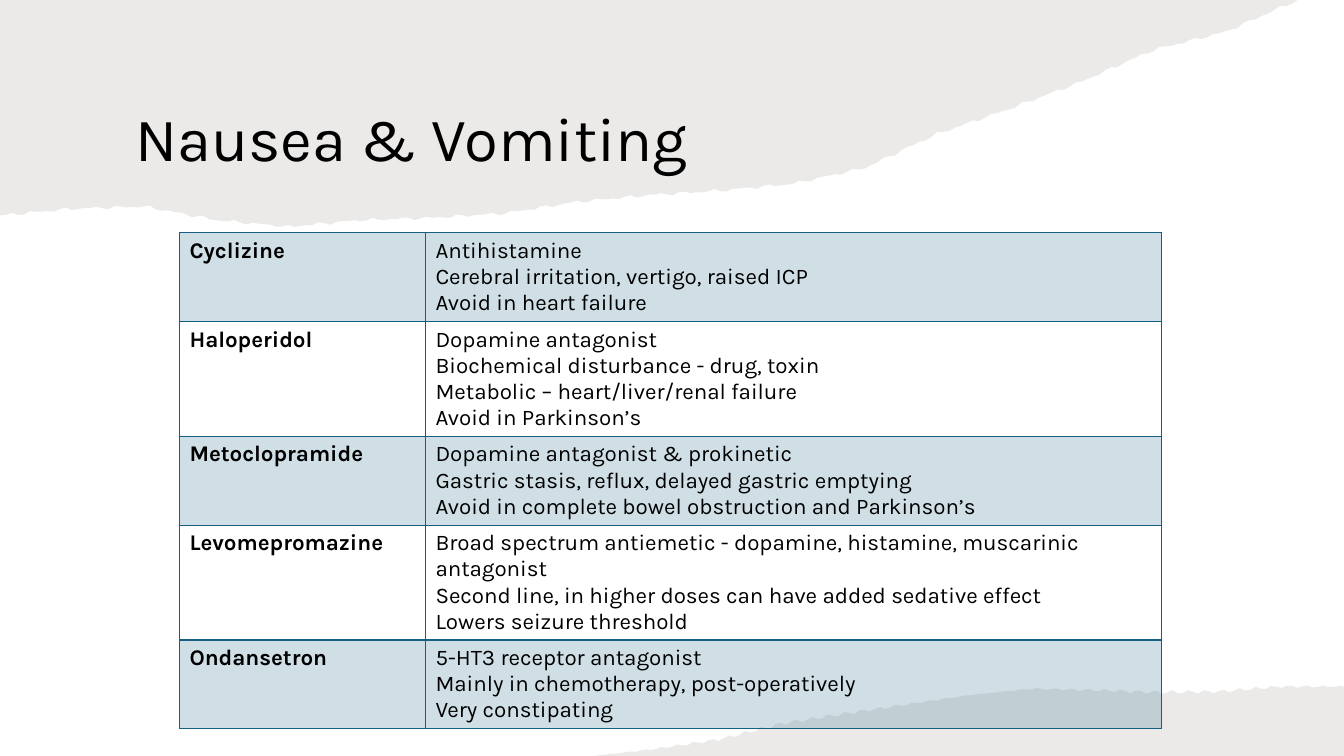
from math import sin

from lxml import etree
from pptx import Presentation
from pptx import util as u
from pptx.dml.color import RGBColor
from pptx.enum import text
from pptx.oxml.ns import qn

COLORS = {"paper": "82766A", "accent": "156082", "ink": "000000"}
OPACITY = {"paper": 15, "accent": 20}
FONT = "Karla"
WIDTH, HEIGHT = 13.33, 7.5
LINE_HEIGHT, CELL_PADDING = 0.26, 0.1
PLAIN_STYLE = "{2D5ABB26-0587-4C30-8999-92F81FD0307C}"

# Boxes: left, top, width, height
TITLE_BOX = (1.24, 0.67, 10.27, 1.46)
TOP_PAPER_BOX = (0, 0, 12.87, 2.25)
BOTTOM_PAPER_BOX = (5.89, 6.79, WIDTH - 5.89, HEIGHT - 6.79)

# Depth of a torn edge at equal steps from left to right, in percent of its box
TOP_DEPTHS = [95, 92, 91, 97, 100, 97, 96, 94, 89, 86, 84, 81, 74, 59, 48, 36, 22, 14, 0]
BOTTOM_DEPTHS = [100, 90, 77, 55, 41, 28, 15, 6, 8, 11, 10, 3, 3]
TEARS_PER_STEP, ROUGHNESS = 12, 0.01

# Drug, effects, lines the effects take up
DRUGS = [
    ("Cyclizine", ["Antihistamine", "Cerebral irritation, vertigo, raised ICP",
                   "Avoid in heart failure"], 3),
    ("Haloperidol", ["Dopamine antagonist", "Biochemical disturbance - drug, toxin",
                     "Metabolic – heart/liver/renal failure", "Avoid in Parkinson’s"], 4),
    ("Metoclopramide", ["Dopamine antagonist & prokinetic",
                        "Gastric stasis, reflux, delayed gastric emptying",
                        "Avoid in complete bowel obstruction and Parkinson’s"], 3),
    ("Levomepromazine", ["Broad spectrum antiemetic - dopamine, histamine, muscarinic antagonist",
                         "Second line, in higher doses can have added sedative effect",
                         "Lowers seizure threshold"], 4),
    ("Ondansetron", ["5-HT3 receptor antagonist", "Mainly in chemotherapy, post-operatively",
                     "Very constipating"], 3),
]


def set_format(target, values):
    for name, value in values.items():
        setattr(target, name, value)


def set_fill(part, properties, color):
    """Give a shape or cell a see-through fill, found in its XML properties."""
    part.fill.solid()
    part.fill.fore_color.rgb = RGBColor.from_string(COLORS[color])
    tint = properties.find(qn("a:solidFill"))[0]
    etree.SubElement(tint, qn("a:alpha"), val=str(OPACITY[color] * 1000))


def write(frame, lines, size, bold=False):
    frame.text = "\n".join(lines)
    for para in frame.paragraphs:
        for span in para.runs:
            set_format(span.font, {"name": FONT, "size": u.Pt(size), "bold": bold})
            span.font.color.rgb = RGBColor.from_string(COLORS["ink"])


def torn_edge(box, depths):
    """Join the depths by straight steps and roughen them with two waves."""
    left, top, width, height = box
    steps = len(depths) - 1
    tears = steps * TEARS_PER_STEP
    points = []
    for tear in range(tears + 1):
        step = min(tear // TEARS_PER_STEP, steps - 1)
        share = tear / TEARS_PER_STEP - step
        depth = depths[step] + share * (depths[step + 1] - depths[step])
        x = width * tear / tears
        y = height * depth / 100 + ROUGHNESS * (sin(37 * x) + sin(83 * x))
        points.append((left + x, top + min(max(y, 0), height)))
    return points


def add_torn_paper(page, box, depths, corner):
    outline = torn_edge(box, depths) + [corner]
    points = [(u.Inches(x), u.Inches(y)) for x, y in outline]
    builder = page.shapes.build_freeform(*points[0])
    builder.add_line_segments(points[1:], close=True)
    paper = builder.convert_to_shape()
    set_fill(paper, paper._element.spPr, "paper")
    paper.line.fill.background()
    paper.shadow.inherit = False
    return paper


def add_title(page, words, box):
    title = page.shapes.title
    lengths = [u.Inches(value) for value in box]
    set_format(title, dict(zip(("left", "top", "width", "height"), lengths)))
    write(title.text_frame, [words], 44)
    set_format(title.text_frame, {"auto_size": text.MSO_AUTO_SIZE.NONE,
                                  "vertical_anchor": text.MSO_ANCHOR.MIDDLE})
    set_format(title.text_frame.paragraphs[0], {"alignment": text.PP_ALIGN.LEFT,
                                                "line_spacing": 0.9})


def add_borders(cell):
    for index, side in enumerate(("a:lnL", "a:lnR", "a:lnT", "a:lnB")):
        line = etree.Element(qn(side), w=str(u.Pt(1)))
        fill = etree.SubElement(line, qn("a:solidFill"))
        etree.SubElement(fill, qn("a:srgbClr"), val=COLORS["accent"])
        cell._tc.tcPr.insert(index, line)


def add_drug_table(page, left, top, columns):
    heights = [CELL_PADDING + LINE_HEIGHT * count for _, _, count in DRUGS]
    box = [u.Inches(value) for value in (left, top, sum(columns), sum(heights))]
    table = page.shapes.add_table(len(DRUGS), len(columns), *box).table
    set_format(table, {"first_row": False, "horz_banding": False})
    table._tbl.tblPr.find(qn("a:tableStyleId")).text = PLAIN_STYLE
    for column, width in zip(table.columns, columns):
        column.width = u.Inches(width)
    for index, (drug, effects, _) in enumerate(DRUGS):
        row = table.rows[index]
        row.height = u.Inches(heights[index])
        write(row.cells[0].text_frame, [drug], 16, bold=True)
        write(row.cells[1].text_frame, effects, 16)
        for cell in row.cells:
            # Every other row is tinted
            if index % 2:
                cell.fill.background()
            else:
                set_fill(cell, cell._tc.get_or_add_tcPr(), "accent")
            add_borders(cell)


def add_drug_slide(deck):
    page = deck.slides.add_slide(deck.slide_layouts[5])
    add_title(page, "Nausea & Vomiting", TITLE_BOX)
    # The top paper lies behind the title, the bottom paper behind the table
    top_paper = add_torn_paper(page, TOP_PAPER_BOX, TOP_DEPTHS, (0, 0))
    page.shapes.title._element.addprevious(top_paper._element)
    add_torn_paper(page, BOTTOM_PAPER_BOX, BOTTOM_DEPTHS, (WIDTH, HEIGHT))
    add_drug_table(page, 1.78, 2.31, (2.44, 7.3))


def main():
    deck = Presentation()
    set_format(deck, {"slide_width": u.Inches(WIDTH), "slide_height": u.Inches(HEIGHT)})
    add_drug_slide(deck)
    deck.save("out.pptx")


if __name__ == "__main__":
    main()
